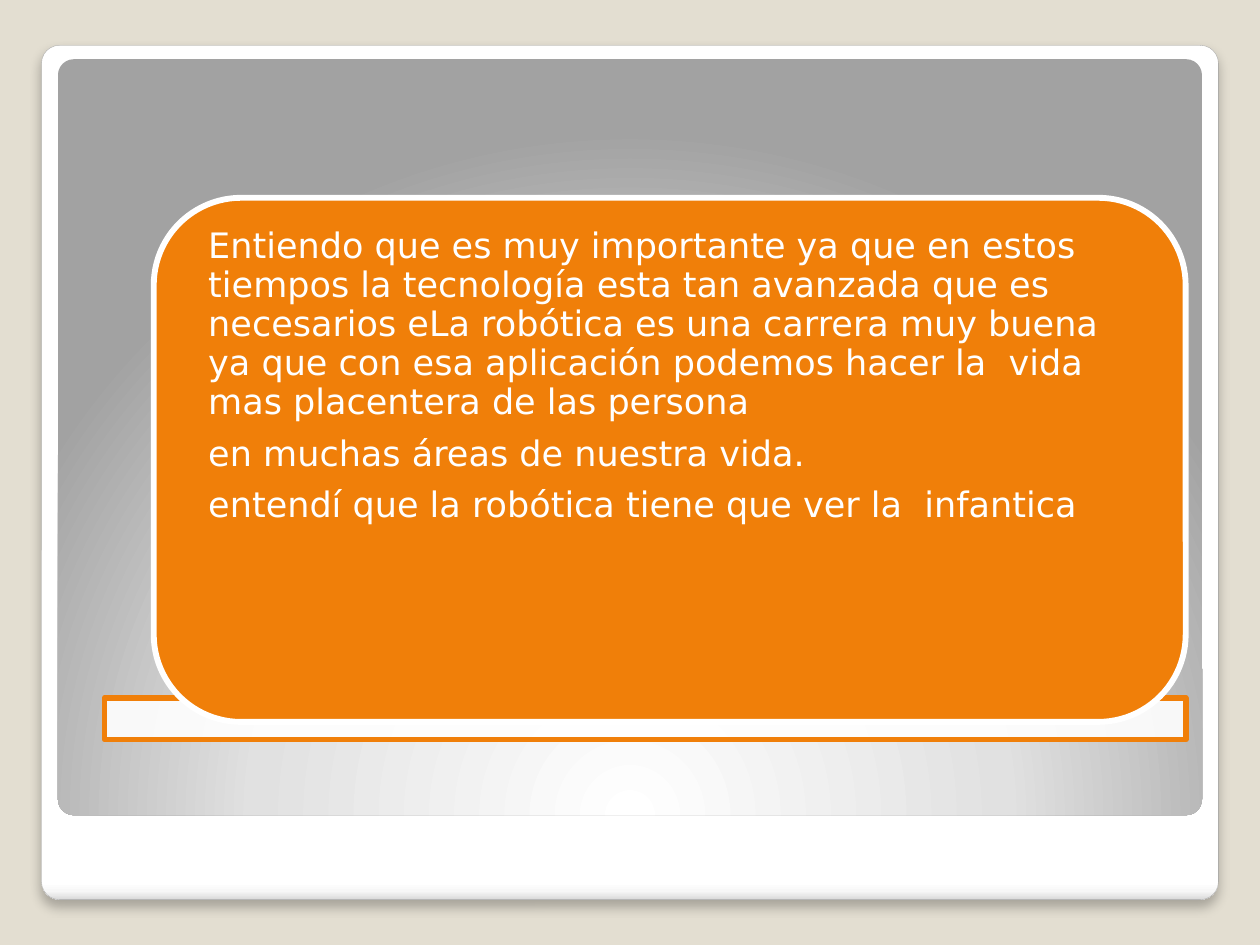
from lxml.etree import SubElement
from pptx import Presentation
from pptx.dml.color import RGBColor
from pptx.enum.shapes import MSO_SHAPE
from pptx.enum.text import MSO_ANCHOR, PP_ALIGN
from pptx.oxml import parse_xml
from pptx.oxml.ns import nsdecls, qn
from pptx.util import Inches, Pt

REFLECTIONS = [
    "Entiendo que es muy importante ya que en estos tiempos la tecnología esta tan avanzada "
    "que es necesarios eLa robótica es una carrera muy buena ya que con esa aplicación "
    "podemos hacer la  vida mas placentera de las persona",
    "en muchas áreas de nuestra vida.",
    "entendí que la robótica tiene que ver la  infantica",
]

BEIGE = RGBColor(0xE3, 0xDE, 0xD1)
WHITE = RGBColor(0xFF, 0xFF, 0xFF)
ORANGE = RGBColor(0xF0, 0x7F, 0x09)
GRAY = RGBColor(0xA4, 0xA4, 0xA4)

WIDTH, HEIGHT = 10, 7.5
FRAME_LEFT, FRAME_TOP, FRAME_HEIGHT = 0.33, 0.36, 6.78
PANEL_LEFT, PANEL_TOP, PANEL_HEIGHT = 0.46, 0.47, 6
BAR_LEFT, BAR_TOP, BAR_WIDTH, BAR_HEIGHT = 0.83, 5.54, 8.58, 0.33
CARD_WIDTH, CARD_HEIGHT = 8.19, 4.16
CARD_LEFT = BAR_LEFT + BAR_WIDTH - CARD_WIDTH
CARD_TOP = 1.57
CORNER = 0.021

FRAME_STOPS = [(0, "FFFFFF"), (98, "FFFFFF"), (99, "F7F7F7"), (100, "DADADA")]
PANEL_STOPS = [(0, "FFFFFF"), (55, "E1E1E1"), (100, "A2A2A2")]
DOWNWARD = '<a:lin ang="5400000" scaled="0"/>'
FROM_BELOW = ('<a:path path="circle"><a:fillToRect l="50000" t="175000" '
              'r="50000" b="-75000"/></a:path>')


def add_block(slide, kind, left, top, width, height, fill=None, line=None, weight=3.35):
    block = slide.shapes.add_shape(
        kind, Inches(left), Inches(top), Inches(width), Inches(height))
    block.shadow.inherit = False
    if fill is not None:
        block.fill.solid()
        block.fill.fore_color.rgb = fill
    if line is None:
        block.line.fill.background()
    else:
        block.line.color.rgb = line
        block.line.width = Pt(weight)
    return block


def set_gradient(block, stops, direction):
    stop_list = "".join(
        f'<a:gs pos="{share * 1000}"><a:srgbClr val="{color}"/></a:gs>'
        for share, color in stops)
    gradient = parse_xml(
        f'<a:gradFill {nsdecls("a")} rotWithShape="1">'
        f'<a:gsLst>{stop_list}</a:gsLst>{direction}</a:gradFill>')
    block.element.spPr.find(qn("a:prstGeom")).addnext(gradient)


def add_shadow(block):
    effects = block.element.spPr.find(qn("a:effectLst"))
    effects.append(parse_xml(
        f'<a:outerShdw {nsdecls("a")} blurRad="{Pt(6)}" dist="{Pt(4)}" dir="5400000" '
        'algn="t" rotWithShape="0"><a:srgbClr val="000000">'
        '<a:alpha val="25000"/></a:srgbClr></a:outerShdw>'))


def write_text(block, paragraphs, *, size, color, font, spacing, after, side, top):
    frame = block.text_frame
    frame.word_wrap = True
    frame.vertical_anchor = MSO_ANCHOR.TOP
    frame.margin_left = frame.margin_right = Inches(side)
    frame.margin_top, frame.margin_bottom = Inches(top), 0
    for index, text in enumerate(paragraphs):
        paragraph = frame.add_paragraph() if index else frame.paragraphs[0]
        paragraph.alignment = PP_ALIGN.LEFT
        paragraph.line_spacing = spacing
        paragraph.space_after = Pt(after)
        run = paragraph.add_run()
        run.text = text
        run.font.size = Pt(size)
        run.font.name = font
        run.font.color.rgb = color


def main():
    deck = Presentation()
    deck.slide_width, deck.slide_height = Inches(WIDTH), Inches(HEIGHT)
    slide = deck.slides.add_slide(deck.slide_layouts[6])
    slide.background.fill.solid()
    slide.background.fill.fore_color.rgb = BEIGE

    frame = add_block(slide, MSO_SHAPE.ROUNDED_RECTANGLE, FRAME_LEFT, FRAME_TOP,
                      WIDTH - 2 * FRAME_LEFT, FRAME_HEIGHT, line=GRAY, weight=0.16)
    frame.adjustments[0] = CORNER
    set_gradient(frame, FRAME_STOPS, DOWNWARD)
    add_shadow(frame)

    panel = add_block(slide, MSO_SHAPE.ROUNDED_RECTANGLE, PANEL_LEFT, PANEL_TOP,
                      WIDTH - 2 * PANEL_LEFT, PANEL_HEIGHT)
    panel.adjustments[0] = CORNER
    set_gradient(panel, PANEL_STOPS, FROM_BELOW)

    bar = add_block(slide, MSO_SHAPE.RECTANGLE, BAR_LEFT, BAR_TOP,
                    BAR_WIDTH, BAR_HEIGHT, fill=WHITE, line=ORANGE)
    bar_color = bar.element.spPr.find(qn("a:solidFill")).find(qn("a:srgbClr"))
    SubElement(bar_color, qn("a:alpha")).set("val", "90000")

    card = add_block(slide, MSO_SHAPE.ROUNDED_RECTANGLE, CARD_LEFT, CARD_TOP,
                     CARD_WIDTH, CARD_HEIGHT, fill=ORANGE, line=WHITE)
    write_text(card, REFLECTIONS, size=20, color=WHITE, font="DejaVu Sans",
               spacing=0.93, after=7, side=0.23, top=0.03)

    deck.save("out.pptx")


if __name__ == "__main__":
    main()
